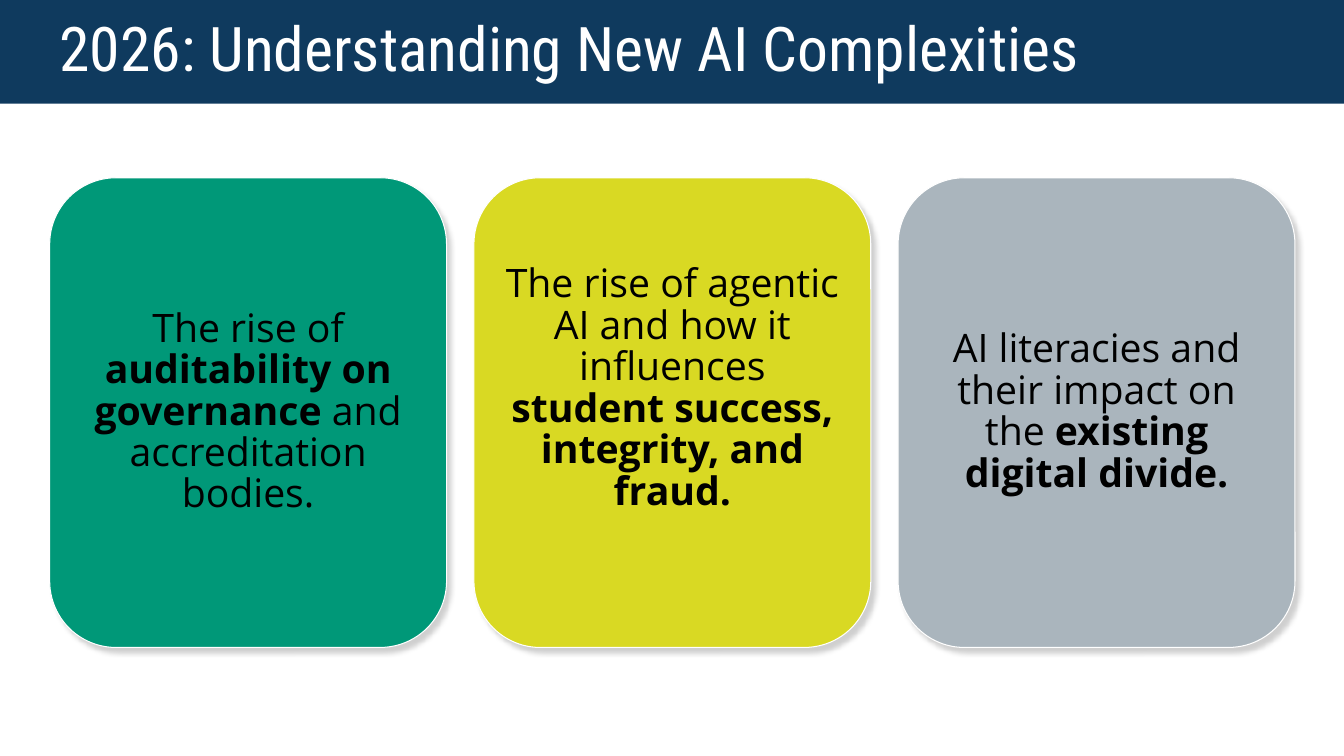
"""Build the slide on new AI complexities in 2026."""
from lxml import etree
from pptx import Presentation
from pptx.dml.color import RGBColor
from pptx.enum.shapes import MSO_SHAPE as SHAPE
from pptx.enum.text import MSO_ANCHOR as ANCHOR, PP_ALIGN as ALIGN
from pptx.oxml.ns import qn
from pptx.util import Pt

NAVY = RGBColor(0x0F, 0x3A, 0x5E)
GREEN = RGBColor(0x00, 0x98, 0x78)
LIME = RGBColor(0xD9, 0xD9, 0x23)
GREY = RGBColor(0xAA, 0xB5, 0xBD)
WHITE = RGBColor(0xFF, 0xFF, 0xFF)
BLACK = RGBColor(0x00, 0x00, 0x00)

LEFT, TOP, WIDTH, HEIGHT = 35.5, 127, 283.5, 335.5
STEP = 303
INSET = 7.2

CARDS = [
    (GREEN, INSET, [("The rise of ", False),
                    ("auditability on governance", True),
                    (" and accreditation bodies.", False)]),
    (LIME, 40.8, [("The rise of agentic AI and how it influences ", False),
                  ("student success, integrity, and fraud.", True)]),
    (GREY, INSET, [("AI literacies and their impact on the ", False),
                   ("existing digital divide.", True)]),
]


def add_run(p, text, font, size, color, bold=False):
    r = p.add_run()
    r.text = text
    r.font.name = font
    r.font.size = Pt(size)
    r.font.bold = bold
    r.font.color.rgb = color


def add_shadow(sp):
    effects = sp._element.spPr.find(qn("a:effectLst"))
    shadow = etree.SubElement(effects, qn("a:outerShdw"), blurRad=str(Pt(3.4)),
                              dist=str(Pt(4.5)), dir=str(50 * 60000),
                              algn="tl", rotWithShape="0")
    color = etree.SubElement(shadow, qn("a:srgbClr"), val=str(BLACK))
    etree.SubElement(color, qn("a:alpha"), val="18000")


prs = Presentation()
prs.slide_width, prs.slide_height = Pt(960), Pt(540)
s = prs.slides.add_slide(prs.slide_layouts[6])

band = s.shapes.add_shape(SHAPE.RECTANGLE, 0, 0, Pt(960), Pt(74))
band.shadow.inherit = False
band.fill.solid()
band.fill.fore_color.rgb = NAVY
band.line.fill.background()

title = s.shapes.add_textbox(Pt(LEFT), Pt(5.8), Pt(889), Pt(62.6))
tf = title.text_frame
tf.word_wrap = True
tf.vertical_anchor = ANCHOR.MIDDLE
p = tf.paragraphs[0]
p.line_spacing = 0.9
add_run(p, "2026: Understanding New AI Complexities",
        "Roboto Condensed", 44, WHITE)

for i, (fill, bottom, runs) in enumerate(CARDS):
    card = s.shapes.add_shape(SHAPE.ROUNDED_RECTANGLE, Pt(LEFT + i * STEP),
                              Pt(TOP), Pt(WIDTH), Pt(HEIGHT))
    card.adjustments[0] = 0.167
    card.fill.solid()
    card.fill.fore_color.rgb = fill
    card.line.color.rgb = WHITE
    card.line.width = Pt(0.75)
    card.shadow.inherit = False
    add_shadow(card)

    tf = card.text_frame
    tf.word_wrap = True
    tf.vertical_anchor = ANCHOR.MIDDLE
    tf.margin_left = tf.margin_right = tf.margin_top = Pt(INSET)
    tf.margin_bottom = Pt(bottom)
    p = tf.paragraphs[0]
    p.alignment = ALIGN.CENTER
    p.line_spacing = 0.88
    for text, bold in runs:
        add_run(p, text, "Open Sans", 28, BLACK, bold)

prs.save("out.pptx")
